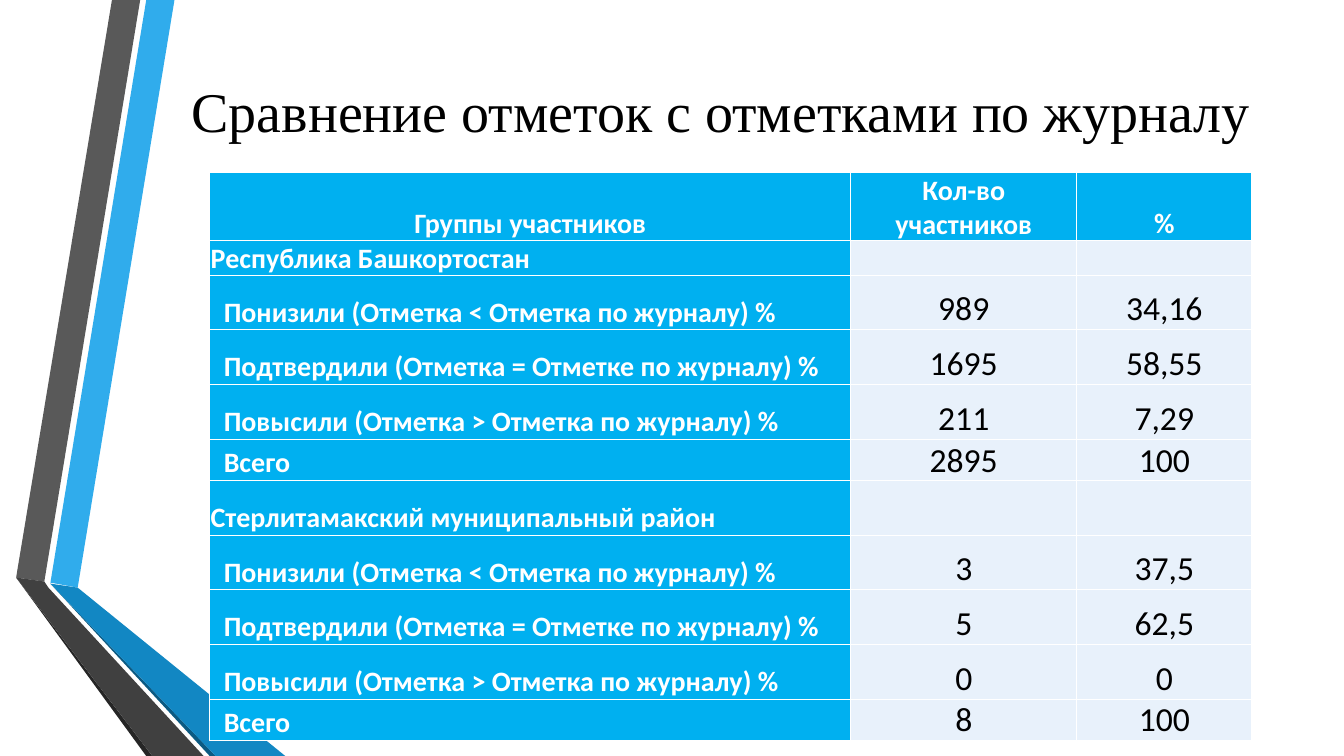
from dataclasses import dataclass

from lxml import etree
from pptx import Presentation
from pptx.dml.color import RGBColor
from pptx.enum.text import MSO_ANCHOR, PP_ALIGN
from pptx.oxml.ns import qn
from pptx.util import Inches, Pt

LEFT, CENTER = PP_ALIGN.LEFT, PP_ALIGN.CENTER
MIDDLE, BOTTOM = MSO_ANCHOR.MIDDLE, MSO_ANCHOR.BOTTOM
BLANK_LAYOUT = 6
BORDER_SIDES = ("a:lnL", "a:lnR", "a:lnT", "a:lnB")


@dataclass(frozen=True)
class Theme:
    title_font: str = "Times New Roman"
    table_font: str = "Calibri"
    title_size: int = 40
    label_size: int = 20
    value_size: int = 24
    text: str = "000000"
    label_text: str = "FFFFFF"
    label_fill: str = "00B0F0"
    value_fill: str = "E8F1FB"
    border: str = "FFFFFF"
    border_width: int = 1
    blue: str = "30ACEC"
    blue_fold: str = "1287C3"
    blue_edge: str = "0C5A82"
    gray: str = "595959"
    gray_fold: str = "404040"
    gray_edge: str = "262626"


class SlideBuilder:
    """Places elements by percentages of the slide's width and height."""

    def __init__(self, presentation, theme):
        self.theme = theme
        self.width = presentation.slide_width
        self.height = presentation.slide_height
        layout = presentation.slide_layouts[BLANK_LAYOUT]
        self.slide = presentation.slides.add_slide(layout)

    def x(self, percent):
        return round(self.width * percent / 100)

    def y(self, percent):
        return round(self.height * percent / 100)

    def style(self, paragraph, font_name, size, color, bold, alignment):
        paragraph.alignment = alignment
        font = paragraph.font
        font.name, font.size, font.bold = font_name, Pt(size), bold
        font.color.rgb = RGBColor.from_string(color)

    def ribbon(self, points, color):
        corners = [(self.x(x), self.y(y)) for x, y in points]
        builder = self.slide.shapes.build_freeform(*corners[0])
        builder.add_line_segments(corners[1:], close=True)
        shape = builder.convert_to_shape()
        shape.shadow.inherit = False
        shape.fill.solid()
        shape.fill.fore_color.rgb = RGBColor.from_string(color)
        shape.line.fill.background()

    def title(self, text, left, top, width, height):
        shape = self.slide.shapes.add_textbox(
            self.x(left), self.y(top), self.x(width), self.y(height))
        frame = shape.text_frame
        frame.word_wrap = True
        frame.vertical_anchor = MIDDLE
        frame.text = text
        self.style(frame.paragraphs[0], self.theme.title_font,
                   self.theme.title_size, self.theme.text, False, CENTER)

    def table(self, rows, left, top, column_widths, row_heights):
        frame = self.slide.shapes.add_table(
            len(rows), len(column_widths), self.x(left), self.y(top),
            self.x(sum(column_widths)), self.y(sum(row_heights)))
        table = frame.table
        table.first_row = table.horz_banding = False
        for column, width in zip(table.columns, column_widths):
            column.width = self.x(width)
        for row, height in zip(table.rows, row_heights):
            row.height = self.y(height)
        for row_index, texts in enumerate(rows):
            for column_index, text in enumerate(texts):
                is_header = row_index == 0
                is_label = is_header or column_index == 0
                is_group = column_index == 0 and not any(texts[1:])
                is_indented = column_index == 0 and not (is_header or is_group)
                alignment = CENTER if is_header or column_index else LEFT
                self.cell(table.cell(row_index, column_index), text,
                          is_label, is_indented, alignment)

    def cell(self, cell, text, is_label, is_indented, alignment):
        theme = self.theme
        cell.text = text
        cell.vertical_anchor = BOTTOM
        cell.margin_left = Inches(0.14 if is_indented else 0.01)
        cell.margin_right = cell.margin_top = Inches(0.01)
        cell.margin_bottom = 0
        is_small = is_label or not text
        self.style(cell.text_frame.paragraphs[0], theme.table_font,
                   theme.label_size if is_small else theme.value_size,
                   theme.label_text if is_label else theme.text,
                   is_label, alignment)
        self.borders(cell)
        cell.fill.solid()
        fill = theme.label_fill if is_label else theme.value_fill
        cell.fill.fore_color.rgb = RGBColor.from_string(fill)

    def borders(self, cell):
        properties = cell._tc.get_or_add_tcPr()
        for side in BORDER_SIDES:
            line = etree.SubElement(properties, qn(side),
                                    w=str(Pt(self.theme.border_width)))
            fill = etree.SubElement(line, qn("a:solidFill"))
            etree.SubElement(fill, qn("a:srgbClr"), val=self.theme.border)


def group_rows(name, lowered, confirmed, raised, total):
    return [
        (name, "", ""),
        ("Понизили (Отметка < Отметка по журналу) %", *lowered),
        ("Подтвердили (Отметка = Отметке по журналу) %", *confirmed),
        ("Повысили (Отметка > Отметка по журналу) %", *raised),
        ("Всего", *total),
    ]


def main():
    presentation = Presentation()
    presentation.slide_width = Inches(13.33)
    presentation.slide_height = Inches(7.5)
    theme = Theme()
    builder = SlideBuilder(presentation, theme)

    # Folded ribbons along the left edge
    gray_tip, blue_tip = (1.2, 76.4), (3.75, 77.2)
    gray_bend, blue_bend = (3.3, 76.93), (5.78, 77.73)
    ribbons = [
        (theme.blue, [(3.75, 77.07), blue_bend, (12.98, 0), (10.88, 0)]),
        (theme.gray, [(10.43, 0), (8.33, 0), gray_tip, gray_bend]),
        (theme.gray_edge, [gray_tip, (10.88, 100), (11.33, 100)]),
        (theme.blue_edge, [blue_tip, (15.6, 100), (16.05, 100)]),
        (theme.blue_fold, [blue_tip, (16.05, 100), (21.23, 100), blue_bend]),
        (theme.gray_fold, [(15.15, 100), (3.6, 77.73), gray_bend, gray_tip,
                           (11.33, 100)]),
    ]
    for color, points in ribbons:
        builder.ribbon(points, color)

    # Title
    builder.title("Сравнение отметок с отметками по журналу",
                  12.53, 1.73, 82.22, 25.6)

    # Table of marks by group
    rows = [
        ("Группы участников", "Кол-во участников", "%"),
        *group_rows("Республика Башкортостан", ("989", "34,16"),
                    ("1695", "58,55"), ("211", "7,29"), ("2895", "100")),
        *group_rows("Стерлитамакский муниципальный район", ("3", "37,5"),
                    ("5", "62,5"), ("0", "0"), ("8", "100")),
    ]
    short, tall = 4, 7.23
    row_heights = [short, short, *[tall] * 3, short, *[tall] * 4, short]
    builder.table(rows, 15.6, 22.8, (47.71, 16.8, 13.05), row_heights)

    presentation.save("out.pptx")


if __name__ == "__main__":
    main()
